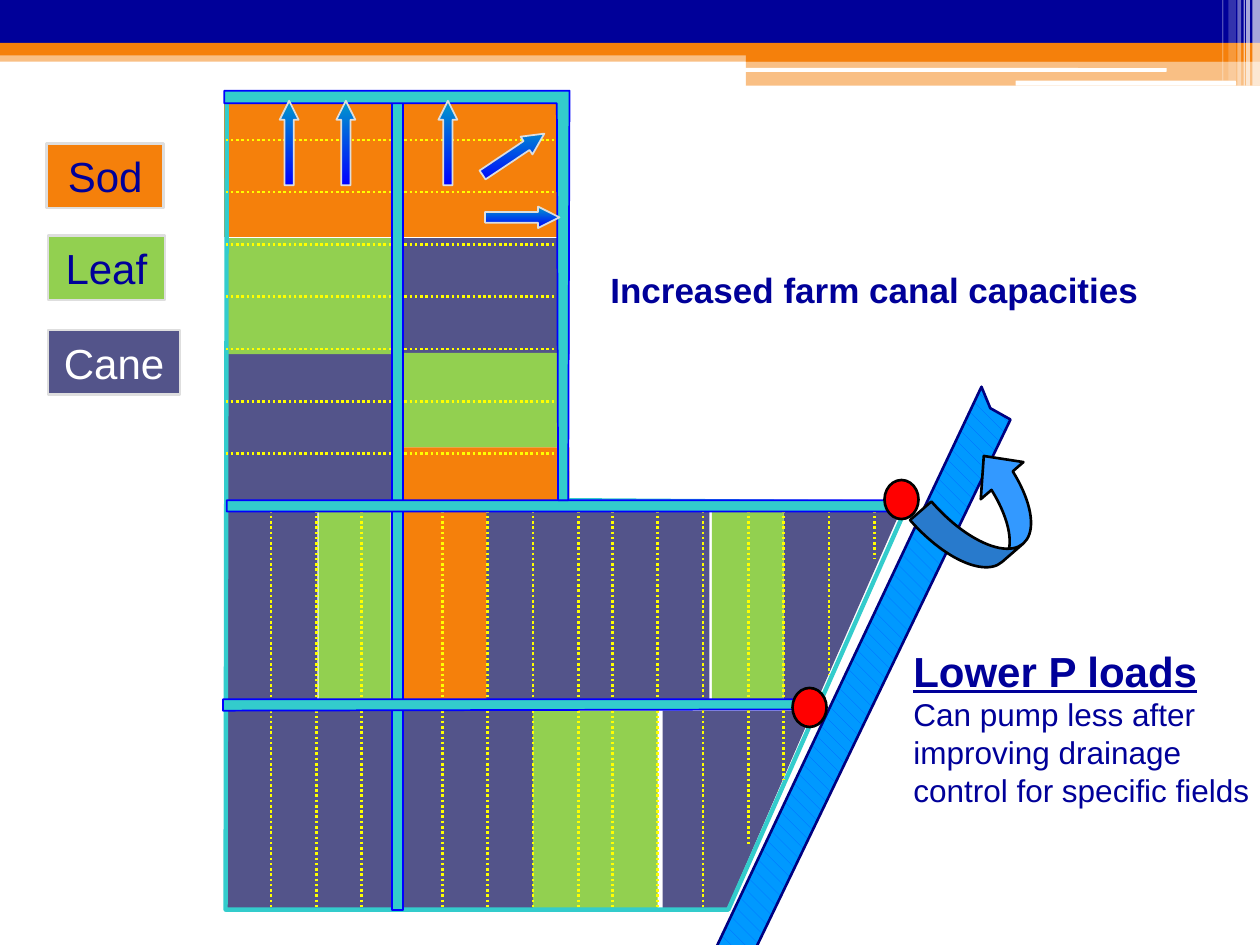
from lxml.etree import SubElement
from pptx import Presentation
from pptx.dml.color import RGBColor
from pptx.enum.dml import MSO_LINE, MSO_PATTERN
from pptx.enum.shapes import MSO_CONNECTOR, MSO_SHAPE as SHAPE
from pptx.enum.text import MSO_ANCHOR, PP_ALIGN
from pptx.oxml.ns import qn
from pptx.util import Inches, Pt

NAVY, ORANGE, GREEN, SLATE = "000099", "F5800B", "92D050", "53548A"
WHITE, TEAL, BLUE, GREY, BLACK = "FFFFFF", "33CCCC", "0000FF", "DEDEDE", "000000"

# Boxes are (left, top, width, height) in inches
BANDS = [  # box, colour, opacity in percent
    ((0, 0.4, 10, 0.09), ORANGE, 50),
    ((0, 0, 10, 0.34), NAVY, 100),
    ((0, 0.34, 10, 0.1), ORANGE, 100),
    ((5.92, 0.39, 4.08, 0.1), ORANGE, 100),
    ((5.92, 0.48, 4.08, 0.2), ORANGE, 50),
]
BAND_SLOTS = [(5.91, 0.54, 3.35, 0.03), (8.06, 0.64, 1.75, 0.04)]
CORNER_STRIPES = [  # left, width, height, opacity
    (9.94, 0.06, 0.68, 65), (9.89, 0.03, 0.68, 65), (9.87, 0.01, 0.68, 60),
    (9.82, 0.03, 0.68, 40), (9.75, 0.06, 0.64, 20), (9.7, 0.01, 0.64, 30),
]
FIELDS = {
    SLATE: [(3.19, 5.64, 1.04, 1.58), (1.78, 5.64, 1.33, 1.58), (1.78, 4.05, 0.74, 1.5),
            (3.85, 4.05, 1.78, 1.5), (1.78, 2.8, 1.33, 1.17), (3.19, 1.89, 1.33, 0.92)],
    GREEN: [(5.65, 4.05, 0.57, 1.5), (2.53, 4.05, 0.57, 1.5), (4.23, 5.64, 0.99, 1.58),
            (1.79, 1.89, 1.35, 0.92), (3.19, 2.8, 1.28, 0.75)],
    ORANGE: [(3.19, 4.05, 0.67, 1.5), (3.19, 3.55, 1.33, 0.42), (1.78, 0.8, 2.74, 1.08)],
}
SLOPED_FIELDS = [
    [(5.26, 7.22), (5.77, 7.21), (6.45, 5.64), (5.26, 5.64)],
    [(6.22, 5.55), (6.49, 5.55), (7.15, 4.05), (6.22, 4.05)],
]
LEGEND = [
    ("Sod", (0.37, 1.14, 0.93, 0.51), ORANGE, NAVY),
    ("Leaf", (0.38, 1.87, 0.93, 0.51), GREEN, NAVY),
    ("Cane", (0.38, 2.62, 1.05, 0.51), SLATE, WHITE),
]
FARM_EDGE = [(1.8, 0.81), (1.79, 7.22), (5.78, 7.22), (7.21, 3.99), (4.5, 3.97), (4.48, 0.79)]
DITCH_RUNS = [(2.15, 3), (3.51, 4), (4.86, 4), (6.22, 3)]  # first x, count
DITCH_GAP = 0.36
SHORT_DITCH_ENDS = [6.71, 6.19, 5.36, 4.43]  # the last ditches stop at the sloped edge
DISTRICT_CANAL = [(5.68, 7.53), (7.79, 3.07), (7.86, 3.24), (8.02, 3.33), (5.91, 7.71), (5.91, 7.54)]
MAIN_CANAL = (3.11, 0.8, 0.09, 6.42)
CROSS_CANALS = [
    [(1.8, 4.06), (7.16, 4.06), (7.23, 3.97), (1.8, 3.97)],
    [(1.77, 5.64), (6.45, 5.63), (6.51, 5.55), (1.77, 5.55)],
]
NORTH_CANAL = [(1.78, 0.82), (1.78, 0.72), (4.52, 0.72), (4.51, 3.97), (4.43, 3.97), (4.42, 0.82)]
PUMPS = [(7.02, 3.81, 0.27, 0.31), (6.29, 5.46, 0.27, 0.31)]
RETURN_FLOW = (7.34, 3.71, 1, 0.73)
FLOW_ARROWS = [  # box before rotation, rotation
    ((3.85, 1.64, 0.59, 0.17), 0), ((3.78, 1.14, 0.59, 0.17), 326.2),
    ((2.41, 1.06, 0.67, 0.15), 270), ((1.96, 1.06, 0.67, 0.15), 270),
    ((3.22, 1.06, 0.67, 0.15), 270),
]
HEADLINE = "Increased farm canal capacities"
RESULT = "Lower P loads"
RESULT_DETAILS = ["Can pump less after", "improving drainage", "control for specific fields"]

prs = Presentation()
prs.slide_width, prs.slide_height = Inches(10), Inches(7.5)
shapes = prs.slides.add_slide(prs.slide_layouts[6]).shapes


def rgb(value):
    return RGBColor.from_string(value)


def paint(shape, fill=None, line=None, width=1, opacity=100):
    shape.shadow.inherit = False
    if fill:
        shape.fill.solid()
        shape.fill.fore_color.rgb = rgb(fill)
        if opacity < 100:
            color = shape.fill._xPr.find(".//" + qn("a:srgbClr"))
            SubElement(color, qn("a:alpha"), val=str(opacity * 1000))
    else:
        shape.fill.background()
    if line:
        shape.line.color.rgb = rgb(line)
        shape.line.width = Pt(width)
    else:
        shape.line.fill.background()
    return shape


def add_block(box, fill, kind=SHAPE.RECTANGLE, adjust=(), rotation=0, **style):
    block = shapes.add_shape(kind, *map(Inches, box))
    for index, value in enumerate(adjust):
        block.adjustments[index] = value
    block.rotation = rotation
    return paint(block, fill, **style)


def add_outline(points, fill=None, **style):
    """Draw a closed polygon through points given in inches."""
    start, *rest = [(Inches(x), Inches(y)) for x, y in points]
    builder = shapes.build_freeform(*start)
    builder.add_line_segments(rest, close=True)
    return paint(builder.convert_to_shape(), fill, **style)


def add_ditch(x1, y1, x2, y2):
    ditch = shapes.add_connector(MSO_CONNECTOR.STRAIGHT, *map(Inches, (x1, y1, x2, y2)))
    ditch.line.color.rgb = rgb("FFFF00")
    ditch.line.width = Pt(1.5)
    ditch.line.dash_style = MSO_LINE.ROUND_DOT
    SubElement(ditch._element.spPr, qn("a:effectLst"))


def write(paragraph, text, size=24, color=NAVY, bold=False, underline=False, align=PP_ALIGN.LEFT):
    paragraph.alignment = align
    run = paragraph.add_run()
    run.text = text
    font = run.font
    font.name, font.size, font.bold, font.underline = "Arial", Pt(size), bold, underline
    font.color.rgb = rgb(color)


def add_text_frame(box):
    frame = shapes.add_textbox(*map(Inches, box)).text_frame
    frame.word_wrap = False
    return frame


# Top band
for box, color, opacity in BANDS:
    add_block(box, color, opacity=opacity)
for box in BAND_SLOTS:
    add_block(box, WHITE, SHAPE.ROUNDED_RECTANGLE)
for left, width, height, opacity in CORNER_STRIPES:
    add_block((left, 0, width, height), WHITE, opacity=opacity)

# Fields and legend
for points in SLOPED_FIELDS:
    add_outline(points, SLATE)
for color, boxes in FIELDS.items():
    for box in boxes:
        add_block(box, color)
for crop, box, color, text_color in LEGEND:
    frame = add_block(box, color, line=GREY, width=1.5).text_frame
    frame.word_wrap = False
    frame.vertical_anchor = MSO_ANCHOR.MIDDLE
    write(frame.paragraphs[0], crop, color=text_color, align=PP_ALIGN.CENTER)

# Farm edge and ditches
add_outline(FARM_EDGE, line=TEAL, width=2.5)
for row in range(7):
    y = 1.11 + row * 0.415
    add_ditch(1.79, y, 4.5, y)
ditch_xs = [first + i * DITCH_GAP for first, count in DITCH_RUNS for i in range(count)]
full_count = len(ditch_xs) - len(SHORT_DITCH_ENDS)
for x, end in zip(ditch_xs, [7.22] * full_count + SHORT_DITCH_ENDS):
    add_ditch(x, 4.01, x, end)

# Canals and pumps
district = add_outline(DISTRICT_CANAL, line="000080", width=1.5)
district.fill.patterned()
district.fill.pattern = MSO_PATTERN.SHINGLE
district.fill.fore_color.rgb = rgb("0066FF")
district.fill.back_color.rgb = rgb("0099FF")
add_block(MAIN_CANAL, TEAL, line=BLUE)
for points, pump in zip(CROSS_CANALS, PUMPS):
    add_outline(points, TEAL, line=BLUE)
    add_block(pump, "FF0000", SHAPE.OVAL, line=BLACK, width=1.5)

# Messages
write(add_text_frame((4.73, 2.08, 4.42, 0.44)).paragraphs[0], HEADLINE, size=20, bold=True,
      align=PP_ALIGN.CENTER)
add_block(RETURN_FLOW, "3399FF", SHAPE.CURVED_UP_ARROW, (0.307, 0.615, 0.333), 319,
          line=BLACK, width=1.5)
result = add_text_frame((7.15, 5.07, 2.89, 1.41))
write(result.paragraphs[0], RESULT, bold=True, underline=True)
for detail in RESULT_DETAILS:
    write(result.add_paragraph(), detail, size=18)

# Flow into the north canal
add_outline(NORTH_CANAL, TEAL, line=BLUE)
for box, rotation in FLOW_ARROWS:
    arrow = add_block(box, BLUE, SHAPE.RIGHT_ARROW, (0.5, 1), rotation, line=GREY)
    arrow.fill.gradient()
    arrow.fill.gradient_angle = 270
    for stop, color in zip(arrow.fill.gradient_stops, ("0099CC", BLUE)):
        stop.color.rgb = rgb(color)
    arrow._element.spPr.find(qn("a:gradFill")).set("rotWithShape", "0")

prs.save("out.pptx")
